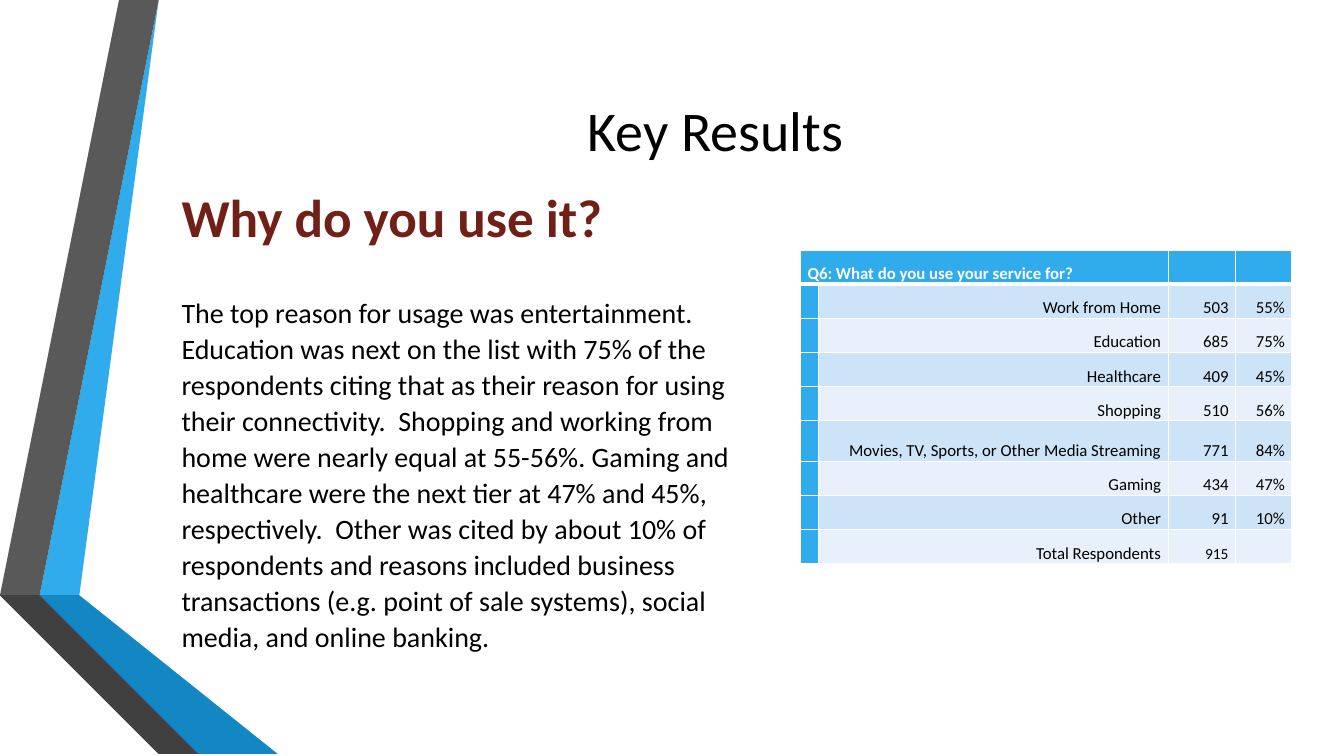
import pptx
import pptx.dml.color
import pptx.enum.text
import pptx.oxml
import pptx.oxml.ns
import pptx.util

Cm = pptx.util.Cm
Pt = pptx.util.Pt
ALIGN = pptx.enum.text.PP_ALIGN
ANCHOR = pptx.enum.text.MSO_ANCHOR

FONT = "Calibri"
BLACK, WHITE, BLUE, MAROON = "000000", "FFFFFF", "30ACEC", "712018"
BANDS = ("CDE3F8", "E8F1FB")

RIBBONS = [
    (BLUE, [(1.27, 14.68), (1.96, 14.81), (4.39, 0), (3.68, 0)]),
    ("595959", [(3.53, 0), (2.82, 0), (0.41, 14.55), (1.12, 14.66)]),
    ("262626", [(0.41, 14.55), (3.68, 19.05), (3.84, 19.05)]),
    ("0C5A82", [(1.27, 14.71), (5.28, 19.05), (5.44, 19.05)]),
    ("1287C3", [(1.27, 14.68), (5.44, 19.05), (7.19, 19.05), (1.96, 14.81)]),
    ("404040", [(5.13, 19.05), (1.22, 14.81), (1.09, 14.68), (1.12, 14.66),
                (0.41, 14.55), (3.84, 19.05)]),
]

HEADING = "Why do you use it?"
FINDINGS = (
    "The top reason for usage was entertainment.  Education was next on the list "
    "with 75% of the respondents citing that as their reason for using their "
    "connectivity.  Shopping and working from home were nearly equal at 55-56%. "
    "Gaming and healthcare were the next tier at 47% and 45%, respectively.  Other "
    "was cited by about 10% of respondents and reasons included business "
    "transactions (e.g. point of sale systems), social media, and online banking."
)

QUESTION = "Q6: What do you use your service for?"
ANSWERS = [
    ("Work from Home", "503", "55%"),
    ("Education", "685", "75%"),
    ("Healthcare", "409", "45%"),
    ("Shopping", "510", "56%"),
    ("Movies, TV, Sports, or Other Media Streaming", "771", "84%"),
    ("Gaming", "434", "47%"),
    ("Other", "91", "10%"),
    ("Total Respondents", "915", ""),
]
COLUMNS = (0.46, 8.81, 1.7, 1.42)
ROW_HEIGHT, TALL_ROW_HEIGHT, TALL_ROW = 0.86, 1.02, 5


def rgb(value):
    """Return the colour for a hex string."""
    return pptx.dml.color.RGBColor.from_string(value)


def add_run(p, text, size, color, bold=False):
    """Append one formatted run to a paragraph."""
    r = p.add_run()
    r.text = text
    r.font.name, r.font.size, r.font.bold = FONT, Pt(size), bold
    r.font.color.rgb = rgb(color)


def place(sp, box):
    """Move a placeholder to a box in centimetres and return its text frame."""
    sp.left, sp.top, sp.width, sp.height = (Cm(v) for v in box)
    tf = sp.text_frame
    tf.word_wrap = True
    tf.auto_size = pptx.enum.text.MSO_AUTO_SIZE.NONE
    tf.vertical_anchor = ANCHOR.MIDDLE
    return tf


def remove_bullet(p):
    """Strip the bullet and hanging indent from a paragraph."""
    pPr = p._p.get_or_add_pPr()
    pPr.set("marL", "0")
    pPr.set("indent", "0")
    pPr.append(pptx.oxml.parse_xml(f"<a:buNone {pptx.oxml.ns.nsdecls('a')}/>"))


def add_ribbons(s, left, top):
    """Draw the folded ribbons from the given corner."""
    group = s.shapes.add_group_shape()
    for color, points in RIBBONS:
        start, *rest = [(left + x, top + y) for x, y in points]
        builder = group.shapes.build_freeform(*start, scale=Cm(1))
        builder.add_line_segments(rest, close=True)
        sp = builder.convert_to_shape()
        sp.shadow.inherit = False
        sp.fill.solid()
        sp.fill.fore_color.rgb = rgb(color)
        sp.line.fill.background()


def fill_title(s, box):
    """Write the slide title."""
    p = place(s.shapes.title, box).paragraphs[0]
    p.alignment = ALIGN.CENTER
    add_run(p, "Key Results", 40, BLACK)


def fill_body(s, box):
    """Write the heading and the findings below it."""
    tf = place(s.placeholders[1], box)
    parts = [(HEADING, 38, MAROON, True, 2, 0), (FINDINGS, 20, BLACK, False, 32, 8)]
    for i, (text, size, color, bold, before, after) in enumerate(parts):
        p = tf.add_paragraph() if i else tf.paragraphs[0]
        p.line_spacing = 1.07
        p.space_before, p.space_after = Pt(before), Pt(after)
        remove_bullet(p)
        add_run(p, text, size, color, bold)


def set_borders(cell, bottom):
    """Draw white cell borders, with the bottom one of the given width."""
    tcPr = cell._tc.get_or_add_tcPr()
    for i, (side, width) in enumerate(zip("LRTB", (1, 1, 1, bottom))):
        tcPr.insert(i, pptx.oxml.parse_xml(
            f'<a:ln{side} {pptx.oxml.ns.nsdecls("a")} w="{Pt(width)}"><a:solidFill>'
            f'<a:srgbClr val="{WHITE}"/></a:solidFill></a:ln{side}>'))


def fill_cell(cell, text, fill, size, color, bold, align, bottom):
    """Fill, frame and write one table cell."""
    cell.fill.solid()
    cell.fill.fore_color.rgb = rgb(fill)
    set_borders(cell, bottom)
    cell.margin_left = cell.margin_right = Cm(0.18)
    cell.margin_top = cell.margin_bottom = 0
    cell.vertical_anchor = ANCHOR.BOTTOM
    p = cell.text_frame.paragraphs[0]
    p.alignment, p.line_spacing = align, 1.07
    if text:
        add_run(p, text, size, color, bold)


def add_answers(s, box):
    """Build the table of answers."""
    rows = [(QUESTION, "", "", "")] + [("", *answer) for answer in ANSWERS]
    table = s.shapes.add_table(len(rows), len(COLUMNS), *(Cm(v) for v in box)).table
    for column, width in zip(table.columns, COLUMNS):
        column.width = Cm(width)
    for i, values in enumerate(rows):
        table.rows[i].height = Cm(TALL_ROW_HEIGHT if i == TALL_ROW else ROW_HEIGHT)
        for j, text in enumerate(values):
            cell = table.cell(i, j)
            if i == 0:
                fill_cell(cell, text, BLUE, 12, WHITE, True, ALIGN.LEFT, 3)
            else:
                fill = BANDS[(i - 1) % 2] if j else BLUE
                size = 11 if text == "915" else 12
                fill_cell(cell, text, fill, size, BLACK, False, ALIGN.RIGHT, 1)
    table.cell(0, 0).merge(table.cell(0, 1))


def add_results_slide(prs):
    """Add the slide with ribbons, findings and answers."""
    s = prs.slides.add_slide(prs.slide_layouts[1])
    add_ribbons(s, 0, 0)
    fill_title(s, (4.11, 1.9, 27.84, 2.69))
    fill_body(s, (4.32, 4.37, 15.57, 12.24))
    add_answers(s, (20.17, 6.3, 12.39, 7.9))


def main():
    """Build and save the presentation."""
    prs = pptx.Presentation()
    prs.slide_width, prs.slide_height = Cm(33.87), Cm(19.05)
    add_results_slide(prs)
    prs.save("out.pptx")


if __name__ == "__main__":
    main()
